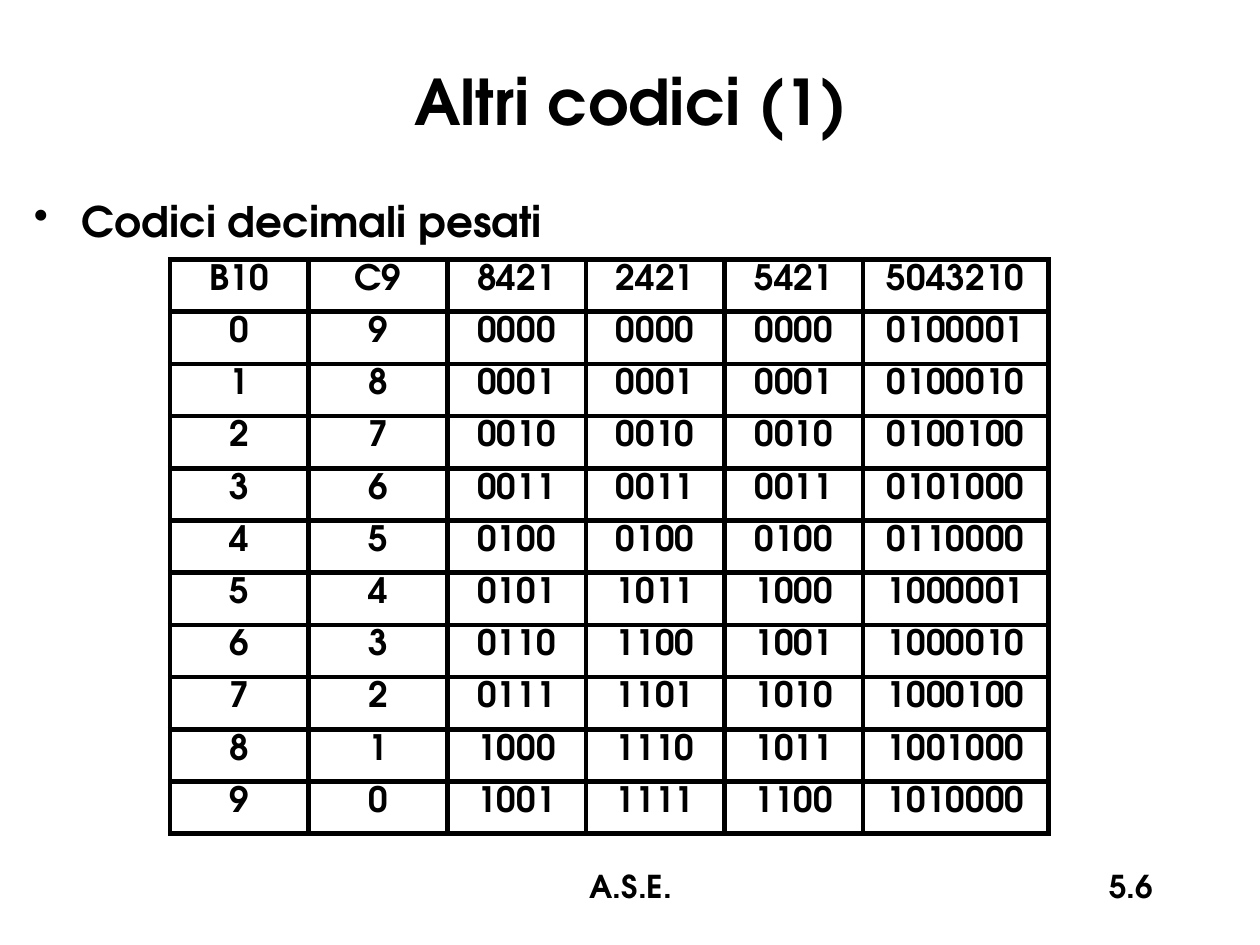
from dataclasses import dataclass

from lxml.etree import SubElement
from pptx import Presentation
from pptx.dml.color import RGBColor
from pptx.enum.text import MSO_ANCHOR as Anchor, PP_ALIGN as Align
from pptx.oxml.ns import qn
from pptx.util import Inches, Pt

BLACK = RGBColor(0x00, 0x00, 0x00)
WHITE = RGBColor(0xFF, 0xFF, 0xFF)
FONT = "TeX Gyre Adventor"
WIDTH, HEIGHT = Inches(10), Inches(7.5)

TABLE_LEFT, TABLE_TOP, TABLE_HEIGHT = 1.35, 2.06, 4.56
COLUMN_WIDTHS = [1.1] * 5 + [1.47]
BORDER_WIDTH = Pt(3)
CODES = [line.split() for line in """
B10 C9 8421 2421 5421 5043210
0 9 0000 0000 0000 0100001
1 8 0001 0001 0001 0100010
2 7 0010 0010 0010 0100100
3 6 0011 0011 0011 0101000
4 5 0100 0100 0100 0110000
5 4 0101 1011 1000 1000001
6 3 0110 1100 1001 1000010
7 2 0111 1101 1010 1000100
8 1 1000 1110 1011 1001000
9 0 1001 1111 1100 1010000
""".strip().splitlines()]


@dataclass(frozen=True)
class Label:
    """A text box placed by its left, top, width and height in inches."""
    text: str
    box: tuple[float, float, float, float]
    size: int
    align: Align
    anchor: Anchor = Anchor.TOP
    bullet: bool = False


LABELS = [
    Label("A.S.E.", (3.42, 6.83, 3.17, 0.5), 18, Align.CENTER),
    Label("5.6", (7.17, 6.83, 2.08, 0.5), 18, Align.RIGHT),
    Label("Altri codici (1)", (0.17, 0.17, 9.67, 1.25), 36, Align.CENTER, Anchor.MIDDLE),
    Label("Codici decimali pesati", (0.17, 1.5, 9.68, 5.17), 24, Align.LEFT, bullet=True),
]


def write(p, text: str, size: int, align: Align) -> None:
    p.text = text
    p.alignment = align
    p.font.name = FONT
    p.font.size = Pt(size)
    p.font.bold = True
    p.font.color.rgb = BLACK


def space_before(p, percent: int) -> None:
    """Set paragraph spacing as a share of the text size."""
    spacing = SubElement(p._p.get_or_add_pPr(), qn("a:spcBef"))
    SubElement(spacing, qn("a:spcPct"), val=str(percent * 1000))


def add_bullet(p, indent: int) -> None:
    props = p._p.get_or_add_pPr()
    props.set("marL", str(indent))
    props.set("indent", str(-indent))
    space_before(p, 20)
    SubElement(props, qn("a:buChar"), char="•")


def add_label(slide, label: Label) -> None:
    tf = slide.shapes.add_textbox(*map(Inches, label.box)).text_frame
    tf.word_wrap = True
    tf.vertical_anchor = label.anchor
    p = tf.paragraphs[0]
    if label.bullet:
        add_bullet(p, Inches(0.38))
    write(p, label.text, label.size, label.align)


def add_borders(cell) -> None:
    props = cell._tc.get_or_add_tcPr()
    for side in ("lnL", "lnR", "lnT", "lnB"):
        line = SubElement(props, qn(f"a:{side}"), w=str(BORDER_WIDTH))
        fill = SubElement(line, qn("a:solidFill"))
        SubElement(fill, qn("a:srgbClr"), val=str(BLACK))


def fill_cell(cell, text: str) -> None:
    cell.margin_left = cell.margin_right = Inches(0.1)
    cell.margin_top, cell.margin_bottom = Inches(0.04), 0
    add_borders(cell)
    cell.fill.background()
    p = cell.text_frame.paragraphs[0]
    space_before(p, 20)
    write(p, text, 20, Align.CENTER)


def add_code_table(slide) -> None:
    frame = slide.shapes.add_table(
        len(CODES), len(COLUMN_WIDTHS), Inches(TABLE_LEFT), Inches(TABLE_TOP),
        Inches(sum(COLUMN_WIDTHS)), Inches(TABLE_HEIGHT))
    table = frame.table
    table.first_row = table.horz_banding = False
    for column, width in zip(table.columns, COLUMN_WIDTHS):
        column.width = Inches(width)
    for row, codes in zip(table.rows, CODES):
        for cell, code in zip(row.cells, codes):
            fill_cell(cell, code)


def main() -> None:
    prs = Presentation()
    prs.slide_width, prs.slide_height = WIDTH, HEIGHT
    slide = prs.slides.add_slide(prs.slide_layouts[6])
    slide.background.fill.solid()
    slide.background.fill.fore_color.rgb = WHITE
    for label in LABELS:
        add_label(slide, label)
    add_code_table(slide)
    prs.save("out.pptx")


if __name__ == "__main__":
    main()
